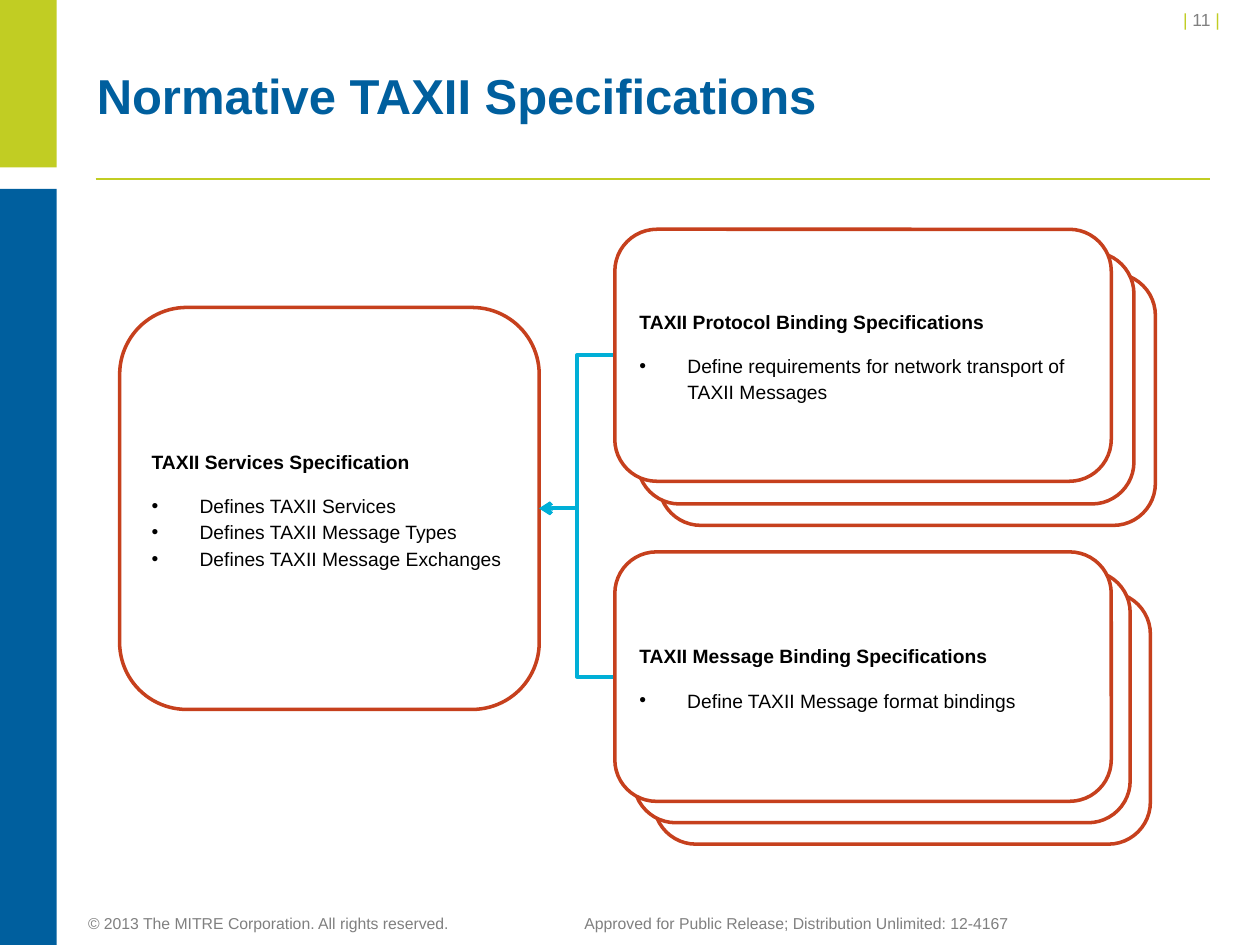
from lxml import etree
from pptx import Presentation
from pptx.dml.color import RGBColor
from pptx.enum import shapes, text
from pptx.oxml.ns import qn
from pptx.util import Inches, Pt

GREEN, BLUE, RED, CYAN = "C1CD23", "005F9E", "C6401D", "00AFD7"
BLACK, WHITE, GREY = "000000", "FFFFFF", "808080"

# Content
TITLE = "Normative TAXII Specifications"
PAGE_NUMBER = [("| ", GREEN), ("11 ", GREY), ("|", GREEN)]
FOOTER = ("© 2013 The MITRE Corporation. All rights reserved.\t"
          "Approved for Public Release; Distribution Unlimited: 12-4167")
SERVICES = {
    "box": (0.95, 2.44, 3.33, 3.19),
    "heading": "TAXII Services Specification",
    "bullets": ["Defines TAXII Services", "Defines TAXII Message Types",
                "Defines TAXII Message Exchanges"],
}
# Each binding is a stack of cards; "behind" lists back cards, rearmost first
BINDINGS = [
    {"box": (4.88, 1.82, 3.94, 2),
     "behind": [(5.23, 2.17), (5.06, 2)],
     "heading": "TAXII Protocol Binding Specifications",
     "bullets": ["Define requirements for network transport of TAXII Messages"]},
    {"box": (4.88, 4.38, 3.94, 1.98),
     "behind": [(5.19, 4.7), (5.03, 4.53)],
     "heading": "TAXII Message Binding Specifications",
     "bullets": ["Define TAXII Message format bindings"]},
]
BACK_CARD_SIZE = (3.94, 2)
BULLET_INDENT = 0.38
FOOTER_TAB = 3.94

presentation = Presentation()
presentation.slide_width, presentation.slide_height = Inches(10), Inches(7.5)
slide = presentation.slides.add_slide(presentation.slide_layouts[6])


def color(hex_value):
    return RGBColor.from_string(hex_value)


def add_text(paragraph, content, size=11, fill=BLACK, bold=False):
    run = paragraph.add_run()
    run.text = content
    run.font.name, run.font.size, run.font.bold = "Arial", Pt(size), bold
    run.font.color.rgb = color(fill)


def add_box(left, top, width, height, anchor):
    box = slide.shapes.add_textbox(*map(Inches, (left, top, width, height)))
    box.text_frame.word_wrap = True
    box.text_frame.vertical_anchor = anchor
    return box.text_frame


def add_block(kind, box, fill, line=None):
    shape = slide.shapes.add_shape(kind, *map(Inches, box))
    shape.shadow.inherit = False
    shape.fill.solid()
    shape.fill.fore_color.rgb = color(fill)
    if line:
        shape.line.color.rgb, shape.line.width = color(line), Pt(2)
    else:
        shape.line.fill.background()
    return shape


def add_card(box):
    return add_block(shapes.MSO_SHAPE.ROUNDED_RECTANGLE, box, WHITE, RED)


def add_bullet(paragraph):
    properties = paragraph._p.get_or_add_pPr()
    properties.set("marL", str(Inches(BULLET_INDENT)))
    properties.set("indent", str(-Inches(BULLET_INDENT)))
    etree.SubElement(properties, qn("a:buFont"), typeface="Arial")
    etree.SubElement(properties, qn("a:buChar"), char="•")


def add_specification(specification):
    card = add_card(specification["box"])
    frame = card.text_frame
    frame.word_wrap = True
    frame.vertical_anchor = text.MSO_ANCHOR.MIDDLE
    lines = [specification["heading"], *specification["bullets"]]
    for index, content in enumerate(lines):
        heading = index == 0
        paragraph = frame.paragraphs[0] if heading else frame.add_paragraph()
        if not heading:
            add_bullet(paragraph)
        paragraph.alignment = text.PP_ALIGN.LEFT
        paragraph.line_spacing = 1.15
        last = index == len(lines) - 1
        paragraph.space_after = Pt(10 if heading or last else 0)
        add_text(paragraph, content, bold=heading)
    return card


def add_line(kind, start, end, line, width, arrow=False):
    connector = slide.shapes.add_connector(kind, *map(Inches, start + end))
    connector.line.color.rgb, connector.line.width = color(line), Pt(width)
    if arrow:
        etree.SubElement(connector.line._get_or_add_ln(), qn("a:tailEnd"), type="arrow")
    etree.SubElement(connector._element.spPr, qn("a:effectLst"))
    return connector


def side_middle(box, right=False):
    left, top, width, height = box
    return (left + width if right else left, top + height / 2)


# Side bars and title rule
for bar, fill in [((0, 0, 0.45, 1.33), GREEN), ((0, 1.5, 0.45, 6), BLUE)]:
    add_block(shapes.MSO_SHAPE.RECTANGLE, bar, fill)
add_line(shapes.MSO_CONNECTOR.STRAIGHT, (0.76, 1.42), (9.6, 1.42), GREEN, 1)

# Footer, with a tab stop between its two statements
footer = add_box(0.6, 7.15, 7.58, 0.3, text.MSO_ANCHOR.BOTTOM).paragraphs[0]
tabs = etree.SubElement(footer._p.get_or_add_pPr(), qn("a:tabLst"))
etree.SubElement(tabs, qn("a:tab"), pos=str(Inches(FOOTER_TAB)), algn="l")
footer.line_spacing = Pt(13)
add_text(footer, FOOTER, size=9, fill=GREY)

# Page number
number_frame = add_box(9.24, 0.08, 0.54, 0.2, text.MSO_ANCHOR.BOTTOM)
number_frame.margin_top, number_frame.margin_bottom = 0, Inches(0.04)
number_frame.paragraphs[0].alignment = text.PP_ALIGN.RIGHT
for part, fill in PAGE_NUMBER:
    add_text(number_frame.paragraphs[0], part, size=10, fill=fill)

# Title
title = add_box(0.67, 0.25, 9, 1.03, text.MSO_ANCHOR.MIDDLE).paragraphs[0]
title.line_spacing = Pt(32)
add_text(title, TITLE, size=28, fill=BLUE, bold=True)

# Services card, arrows behind the bindings, then the binding stacks
services_card = add_specification(SERVICES)
arrows = [add_line(shapes.MSO_CONNECTOR.ELBOW, side_middle(binding["box"]),
                   side_middle(SERVICES["box"], right=True), CYAN, 2.25, arrow=True)
          for binding in BINDINGS]
for binding, arrow in zip(BINDINGS, arrows):
    for corner in binding["behind"]:
        add_card(corner + BACK_CARD_SIZE)
    arrow.begin_connect(add_specification(binding), 1)
    arrow.end_connect(services_card, 3)

presentation.save("out.pptx")
